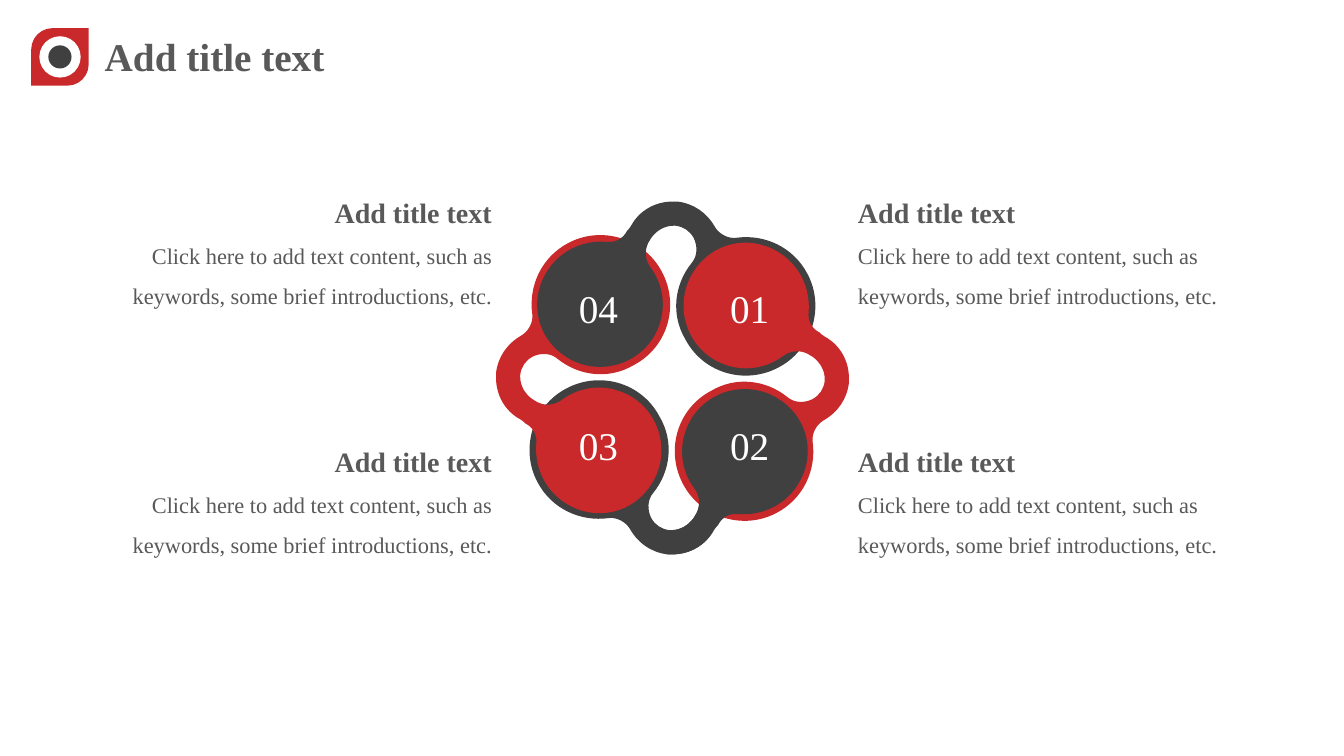
import lxml.etree
import pptx
import pptx.util
import pptx.dml.color
import pptx.enum.shapes
import pptx.enum.text
import pptx.oxml.ns

Inches = pptx.util.Inches
RGBColor = pptx.dml.color.RGBColor
MSO_SHAPE = pptx.enum.shapes.MSO_SHAPE
PP_ALIGN = pptx.enum.text.PP_ALIGN

RED = RGBColor(0xC9, 0x29, 0x2A)
DARK = RGBColor(0x40, 0x40, 0x40)
GRAY = RGBColor(0x59, 0x59, 0x59)
WHITE = RGBColor(0xFF, 0xFF, 0xFF)

prs = pptx.Presentation()
prs.slide_width, prs.slide_height = Inches(13.33), Inches(7.5)
s = prs.slides.add_slide(prs.slide_layouts[6])


def paint(sp, color):
    sp.fill.solid()
    sp.fill.fore_color.rgb = color
    sp.line.fill.background()
    sp.shadow.inherit = False


def add_text(box, lines, color, align=PP_ALIGN.LEFT, spacing=None, wrap=True, inset=None):
    """Add a text box; lines holds (text, size, bold) for each paragraph."""
    tf = s.shapes.add_textbox(*[Inches(v) for v in box]).text_frame
    tf.word_wrap = wrap
    tf.auto_size = pptx.enum.text.MSO_AUTO_SIZE.SHAPE_TO_FIT_TEXT
    if inset is not None:
        tf.margin_left = tf.margin_right = tf.margin_top = tf.margin_bottom = Inches(inset)
    for i, (text, size, bold) in enumerate(lines):
        p = tf.add_paragraph() if i else tf.paragraphs[0]
        p.text = text
        p.alignment = align
        p.line_spacing = spacing
        p.font.name = "Times New Roman"
        p.font.size = pptx.util.Pt(size)
        p.font.bold = bold
        p.font.color.rgb = color


# Heading with its icon
add_text((0.94, 0.27, 2.41, 0.57), [("Add title text", 28, True)], GRAY, wrap=False)
for shape, x, y, size, color in [
    (MSO_SHAPE.ROUND_2_DIAG_RECTANGLE, 0.31, 0.28, 0.57, RED),
    (MSO_SHAPE.OVAL, 0.39, 0.36, 0.41, WHITE),
    (MSO_SHAPE.OVAL, 0.48, 0.45, 0.23, DARK),
]:
    sp = s.shapes.add_shape(shape, Inches(x), Inches(y), Inches(size), Inches(size))
    paint(sp, color)
    if shape == MSO_SHAPE.ROUND_2_DIAG_RECTANGLE:
        sp.adjustments[0] = 0.37

# Top link of the ring: a start, then two control points and an end point per curve
LINK = [
    (8.01, 2.72),
    (7.87, 2.45), (7.58, 2.32), (7.30, 2.36),
    (7.22, 2.37), (7.13, 2.32), (7.09, 2.25),
    (7.01, 2.11), (6.88, 2.02), (6.72, 2.00),
    (6.70, 2.00), (6.69, 2.00), (6.67, 2.00),
    (6.50, 2.00), (6.34, 2.09), (6.26, 2.24),
    (6.25, 2.26), (6.23, 2.28), (6.22, 2.29),
    (6.18, 2.37), (6.10, 2.41), (6.02, 2.40),
    (5.78, 2.38), (5.54, 2.49), (5.41, 2.72),
    (5.25, 3.00), (5.33, 3.35), (5.60, 3.53),
    (5.89, 3.73), (6.29, 3.65), (6.48, 3.35),
    (6.62, 3.12), (6.60, 2.85), (6.45, 2.65),
    (6.40, 2.58), (6.39, 2.49), (6.43, 2.41),
    (6.44, 2.39), (6.45, 2.38), (6.46, 2.36),
    (6.51, 2.29), (6.59, 2.24), (6.68, 2.24),
    (6.69, 2.24), (6.69, 2.24), (6.70, 2.24),
    (6.78, 2.25), (6.84, 2.29), (6.88, 2.36),
    (6.92, 2.44), (6.92, 2.54), (6.86, 2.61),
    (6.69, 2.82), (6.65, 3.12), (6.80, 3.37),
    (6.98, 3.71), (7.41, 3.83), (7.75, 3.63),
    (8.06, 3.45), (8.18, 3.04), (8.01, 2.72),
]
# Half a link closes the ring, so that each link overlaps the one before it
HALF_LINK = LINK[9:46]
CX, CY = 6.67, 3.75

# Bottom, left, top and right links, then the bottom half again; quarter turns clockwise
for outline, turns, color in [(LINK, 2, DARK), (LINK, 3, RED), (LINK, 0, DARK),
                              (LINK, 1, RED), (HALF_LINK, 2, DARK)]:
    points = []
    for x, y in outline:
        dx, dy = x - CX, y - CY
        for _ in range(turns):
            dx, dy = -dy, dx
        points.append((Inches(CX + dx), Inches(CY + dy)))
    builder = s.shapes.build_freeform(*points[0])
    builder.add_line_segments(points[1:], close=True)
    sp = builder.convert_to_shape()
    paint(sp, color)
    # Join every three line segments into one Bezier curve
    segments = sp._element.xpath(".//a:lnTo")
    for i in range(0, len(segments) - 2, 3):
        curve = lxml.etree.Element(pptx.oxml.ns.qn("a:cubicBezTo"))
        segments[i].addprevious(curve)
        for segment in segments[i:i + 3]:
            curve.append(segment[0])
            segment.getparent().remove(segment)

for number, x, y in [("01", 6.96, 2.77), ("02", 6.96, 4.13),
                     ("04", 5.46, 2.77), ("03", 5.46, 4.13)]:
    add_text((x, y, 0.95, 0.57), [(number, 28, False)], WHITE, PP_ALIGN.CENTER)

# Descriptions on both sides of the ring
DESCRIPTION = [
    ("Add title text", 20, True),
    ("Click here to add text content, such as keywords, some brief introductions, etc.", 16, False),
]
for x, align in [(8.51, PP_ALIGN.LEFT), (0.71, PP_ALIGN.RIGHT)]:
    for y in (1.77, 4.24):
        add_text((x, y, 4.17, 1.26), DESCRIPTION, GRAY, align, spacing=1.5, inset=0)

prs.save("out.pptx")
